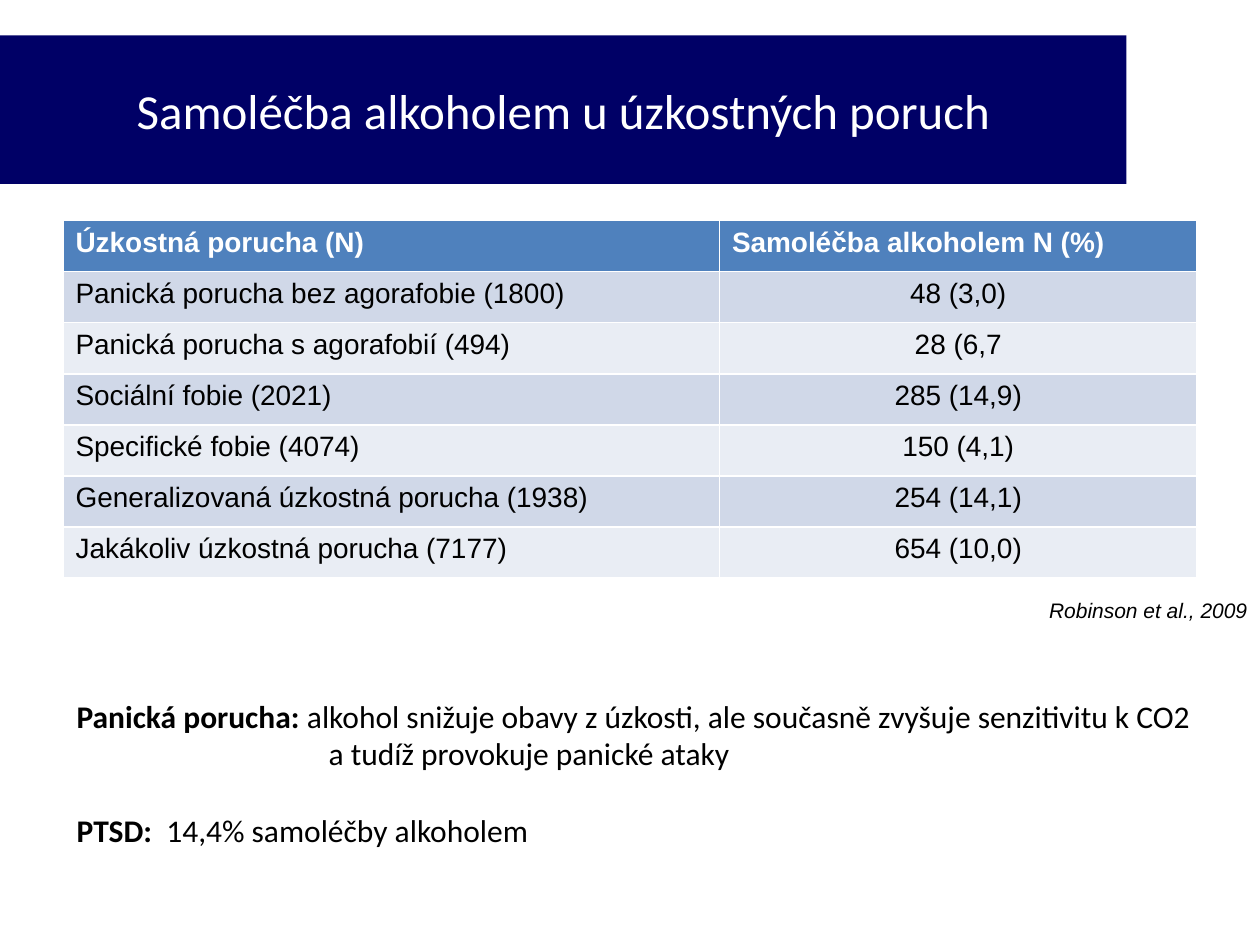
import pptx
import pptx.dml.color
import pptx.enum.text
import pptx.util

Inches = pptx.util.Inches
Pt = pptx.util.Pt
ALIGN = pptx.enum.text.PP_ALIGN
ANCHOR = pptx.enum.text.MSO_ANCHOR

TITLE = "Samoléčba alkoholem u úzkostných poruch"
ROWS = [
    ("Úzkostná porucha (N)", "Samoléčba alkoholem N (%)"),
    ("Panická porucha bez agorafobie (1800)", "48 (3,0)"),
    ("Panická porucha s agorafobií (494)", "28 (6,7"),
    ("Sociální fobie (2021)", "285 (14,9)"),
    ("Specifické fobie (4074)", "150 (4,1)"),
    ("Generalizovaná úzkostná porucha (1938)", "254 (14,1)"),
    ("Jakákoliv úzkostná porucha (7177)", "654 (10,0)"),
]
CITATION = "Robinson et al., 2009"
# Bold lead, plain text, left indent in inches, space before in points
NOTES = [
    ("Panická porucha: ",
     "alkohol snižuje obavy z úzkosti, ale současně zvyšuje senzitivitu k CO2", 0, 0),
    ("", "a tudíž provokuje panické ataky", 2, 0),
    ("PTSD: ", " 14,4% samoléčby alkoholem", 0, 22),
]
COLUMN_WIDTHS = (5.21, 3.79)
ROW_HEIGHT = 2.84 / len(ROWS)
HEADER_FILL = "4F81BD"
BAND_FILLS = ("E9EDF4", "D0D8E8")


def color(hex_code):
    return pptx.dml.color.RGBColor.from_string(hex_code)


def set_fill(target, hex_code):
    target.fill.solid()
    target.fill.fore_color.rgb = color(hex_code)


def write(para, text, size, font="Arial", ink="000000", bold=False, italic=False, align=ALIGN.LEFT):
    """Append a formatted span to a paragraph."""
    para.alignment = align
    span = para.add_run()
    span.text = text
    span.font.size = Pt(size)
    span.font.name = font
    span.font.bold = bold
    span.font.italic = italic
    span.font.color.rgb = color(ink)


def add_title(slide):
    title = slide.shapes.title
    title.left, title.top = Inches(0), Inches(0.28)
    title.width, title.height = Inches(8.94), Inches(1.18)
    set_fill(title, "000066")
    title.text_frame.vertical_anchor = ANCHOR.MIDDLE
    write(title.text_frame.paragraphs[0], TITLE, 28, font="Calibri", ink="FFFFFF", align=ALIGN.CENTER)


def add_disorder_table(slide):
    table = slide.shapes.add_table(
        len(ROWS), len(COLUMN_WIDTHS), Inches(0.5), Inches(1.75),
        Inches(sum(COLUMN_WIDTHS)), Inches(ROW_HEIGHT * len(ROWS))).table
    for column, width in zip(table.columns, COLUMN_WIDTHS):
        column.width = Inches(width)
    for row_index, texts in enumerate(ROWS):
        table.rows[row_index].height = Inches(ROW_HEIGHT)
        header = row_index == 0
        for column_index, text in enumerate(texts):
            cell = table.cell(row_index, column_index)
            set_fill(cell, HEADER_FILL if header else BAND_FILLS[row_index % 2])
            centered = column_index == 1 and not header
            write(cell.text_frame.paragraphs[0], text, 16, bold=header,
                  ink="FFFFFF" if header else "000000",
                  align=ALIGN.CENTER if centered else ALIGN.LEFT)


def add_text_frame(slide, left, top, width, height):
    box = slide.shapes.add_textbox(Inches(left), Inches(top), Inches(width), Inches(height))
    box.text_frame.word_wrap = False
    box.text_frame.auto_size = pptx.enum.text.MSO_AUTO_SIZE.SHAPE_TO_FIT_TEXT
    return box.text_frame


def add_notes(slide):
    frame = add_text_frame(slide, 0.51, 5.48, 9.1, 1.31)
    for index, (lead, text, indent, space) in enumerate(NOTES):
        para = frame.add_paragraph() if index else frame.paragraphs[0]
        para.space_before = Pt(space)
        para._p.get_or_add_pPr().set("marL", str(Inches(indent)))
        if lead:
            write(para, lead, 18, font="Calibri", bold=True)
        write(para, text, 18, font="Calibri")


def main():
    deck = pptx.Presentation()
    deck.slide_width, deck.slide_height = Inches(10), Inches(7.5)
    slide = deck.slides.add_slide(deck.slide_layouts[5])
    add_disorder_table(slide)
    add_title(slide)
    citation = add_text_frame(slide, 8.21, 4.69, 1.79, 0.3)
    write(citation.paragraphs[0], CITATION, 12, italic=True, align=ALIGN.RIGHT)
    add_notes(slide)
    deck.save("out.pptx")


if __name__ == "__main__":
    main()
